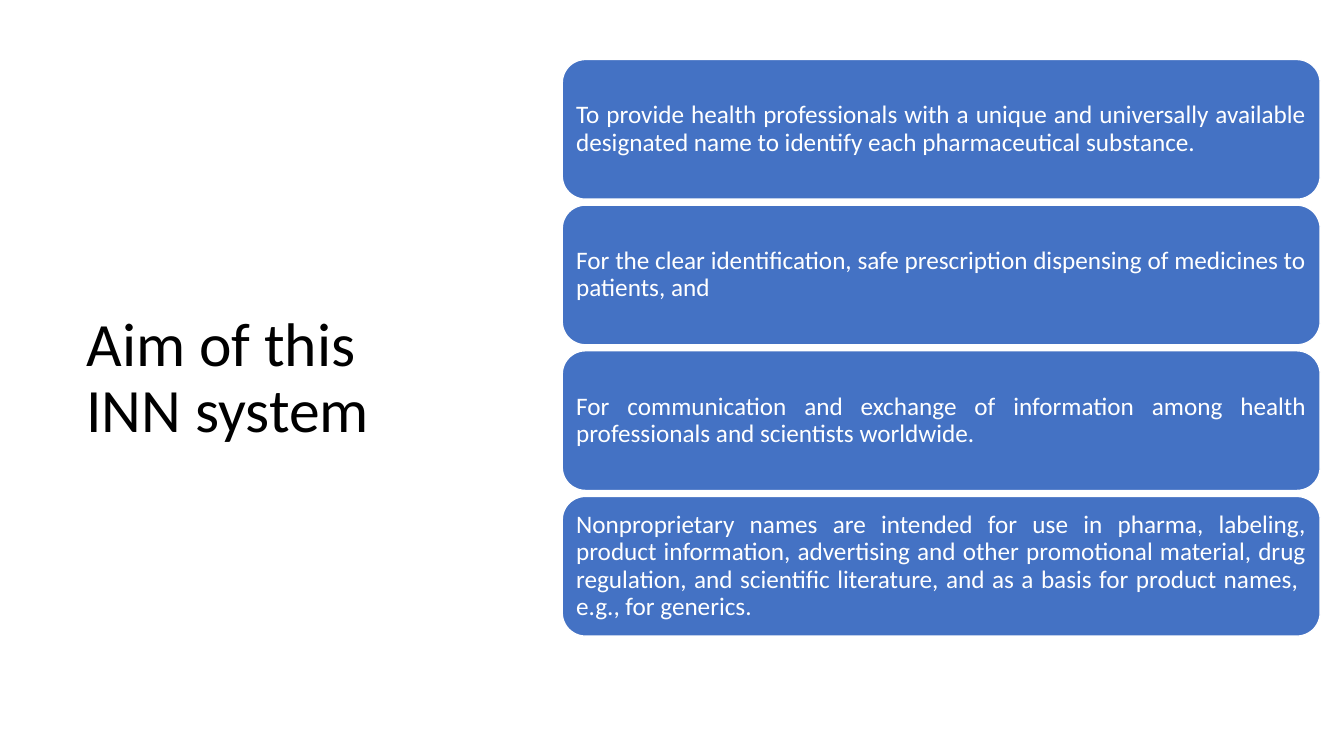
from dataclasses import dataclass

from pptx import Presentation
from pptx.dml.color import RGBColor
from pptx.enum.shapes import MSO_SHAPE
from pptx.enum.text import MSO_ANCHOR, PP_ALIGN
from pptx.slide import Slide
from pptx.text.text import TextFrame
from pptx.util import Cm, Pt

ROUNDED = MSO_SHAPE.ROUNDED_RECTANGLE
MIDDLE = MSO_ANCHOR.MIDDLE
LEFT = PP_ALIGN.LEFT
JUSTIFY = PP_ALIGN.JUSTIFY


@dataclass(frozen=True)
class Theme:
    font: str = "Calibri"
    title_size: int = 44
    aim_size: int = 18
    line_spacing: float = 0.9
    title_color: RGBColor = RGBColor(0x00, 0x00, 0x00)
    aim_color: RGBColor = RGBColor(0xFF, 0xFF, 0xFF)
    aim_fill: RGBColor = RGBColor(0x44, 0x72, 0xC4)


@dataclass(frozen=True)
class Stack:
    """Column of equal boxes, in centimetres."""
    left: float = 14.17
    top: float = 1.5
    width: float = 19.1
    height: float = 3.52
    pitch: float = 3.67
    inset: float = 0.18


THEME = Theme()
STACK = Stack()
TITLE = "Aim of this INN system"
AIMS = (
    "To provide health professionals with a unique and universally available "
    "designated name to identify each pharmaceutical substance.",
    "For the clear identification, safe prescription dispensing of medicines "
    "to patients, and",
    "For communication and exchange of information among health professionals "
    "and scientists worldwide.",
    "Nonproprietary names are intended for use in pharma, labeling, product "
    "information, advertising and other promotional material, drug regulation, "
    "and scientific literature, and as a basis for product names,  e.g., for "
    "generics.",
)


def write(frame: TextFrame, text: str, size: int, color: RGBColor,
          align: PP_ALIGN) -> None:
    frame.word_wrap = True
    frame.vertical_anchor = MIDDLE
    paragraph = frame.paragraphs[0]
    paragraph.text = text
    paragraph.alignment = align
    paragraph.line_spacing = THEME.line_spacing
    paragraph.font.name = THEME.font
    paragraph.font.size = Pt(size)
    paragraph.font.color.rgb = color


def add_title(slide: Slide) -> None:
    title = slide.shapes.add_textbox(Cm(1.93), Cm(2.01), Cm(9.53), Cm(15.11))
    write(title.text_frame, TITLE, THEME.title_size, THEME.title_color, LEFT)


def add_aim(slide: Slide, row: int, text: str) -> None:
    aim = slide.shapes.add_shape(
        ROUNDED, Cm(STACK.left), Cm(STACK.top + row * STACK.pitch),
        Cm(STACK.width), Cm(STACK.height))
    aim.shadow.inherit = False
    aim.fill.solid()
    aim.fill.fore_color.rgb = THEME.aim_fill
    aim.line.color.rgb = THEME.aim_color
    aim.line.width = Pt(1)
    frame = aim.text_frame
    frame.margin_left = frame.margin_right = Cm(STACK.inset)
    frame.margin_top = frame.margin_bottom = Cm(STACK.inset)
    write(frame, text, THEME.aim_size, THEME.aim_color, JUSTIFY)


def main() -> None:
    deck = Presentation()
    deck.slide_width, deck.slide_height = Cm(33.87), Cm(19.05)
    slide = deck.slides.add_slide(deck.slide_layouts[6])

    # Title on the left
    add_title(slide)

    # Stacked aims on the right
    for row, text in enumerate(AIMS):
        add_aim(slide, row, text)

    deck.save("out.pptx")


if __name__ == "__main__":
    main()
